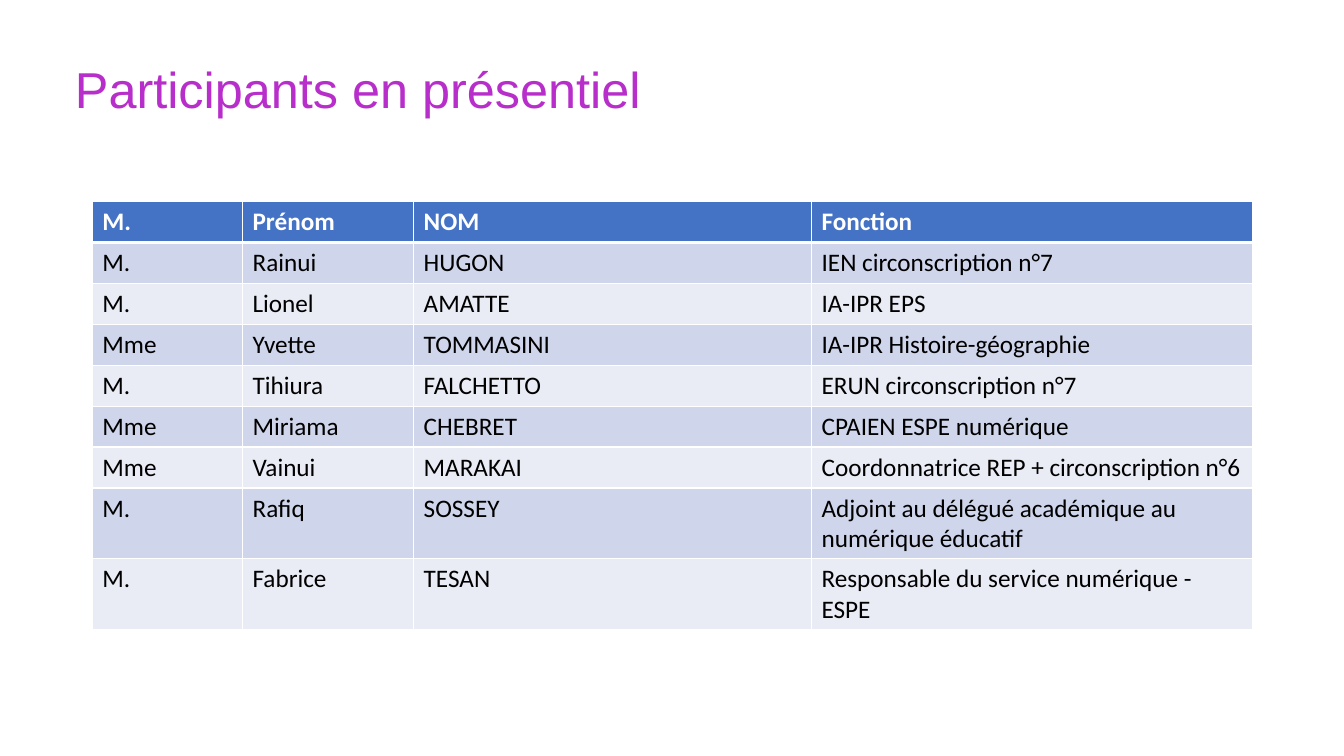
import dataclasses

import lxml.etree
import pptx
import pptx.dml.color
import pptx.enum.text
import pptx.oxml.ns
import pptx.util

PX = 9525  # EMU in one px, 96 px to the inch


@dataclasses.dataclass(frozen=True)
class Theme:
    title_font: str = "Arial"
    body_font: str = "Calibri"
    title_size: int = 36
    body_size: int = 18
    title: str = "B82ECB"
    header: str = "4472C4"
    bands: tuple = ("CFD5EA", "E9EBF5")
    header_text: str = "FFFFFF"
    body_text: str = "000000"
    rule: str = "FFFFFF"
    thin_rule: int = 1
    thick_rule: int = 3


THEME = Theme()

COLUMN_WIDTHS = (143, 163, 379, 420)
ROW_HEIGHT = 39
PARTICIPANTS = (
    ("M.", "Prénom", "NOM", "Fonction"),
    ("M.", "Rainui", "HUGON", "IEN circonscription n°7"),
    ("M.", "Lionel", "AMATTE", "IA-IPR EPS"),
    ("Mme", "Yvette", "TOMMASINI", "IA-IPR Histoire-géographie"),
    ("M.", "Tihiura", "FALCHETTO", "ERUN circonscription n°7"),
    ("Mme", "Miriama", "CHEBRET", "CPAIEN ESPE numérique"),
    ("Mme", "Vainui", "MARAKAI", "Coordonnatrice REP + circonscription n°6"),
    ("M.", "Rafiq", "SOSSEY", "Adjoint au délégué académique au numérique éducatif"),
    ("M.", "Fabrice", "TESAN", "Responsable du service numérique - ESPE"),
)


def px(length):
    return pptx.util.Emu(length * PX)


def rgb(colour):
    return pptx.dml.color.RGBColor.from_string(colour)


def add_run(paragraph, text, font, size, colour, bold=False):
    run = paragraph.add_run()
    run.text = text
    run.font.name = font
    run.font.size = pptx.util.Pt(size)
    run.font.bold = bold
    run.font.color.rgb = rgb(colour)


def add_title(slide, left, top, width, height):
    heading = slide.shapes.add_textbox(px(left), px(top), px(width), px(height))
    frame = heading.text_frame
    frame.word_wrap = True
    frame.vertical_anchor = pptx.enum.text.MSO_ANCHOR.MIDDLE
    frame.paragraphs[0].line_spacing = 0.9
    add_run(frame.paragraphs[0], "Participants en présentiel",
            THEME.title_font, THEME.title_size, THEME.title)


def add_borders(cell, top, bottom):
    """Rule the four sides; must come before the cell's fill."""
    properties = cell._tc.get_or_add_tcPr()
    widths = {"L": THEME.thin_rule, "R": THEME.thin_rule, "T": top, "B": bottom}
    for side, width in widths.items():
        line = lxml.etree.SubElement(properties, pptx.oxml.ns.qn(f"a:ln{side}"),
                                     w=str(pptx.util.Pt(width)))
        fill = lxml.etree.SubElement(line, pptx.oxml.ns.qn("a:solidFill"))
        lxml.etree.SubElement(fill, pptx.oxml.ns.qn("a:srgbClr"), val=THEME.rule)


def add_participants(slide, left, top):
    table = slide.shapes.add_table(
        len(PARTICIPANTS), len(COLUMN_WIDTHS), px(left), px(top),
        px(sum(COLUMN_WIDTHS)), px(ROW_HEIGHT * len(PARTICIPANTS))).table
    for column, width in zip(table.columns, COLUMN_WIDTHS):
        column.width = px(width)

    for index, participant in enumerate(PARTICIPANTS):
        table.rows[index].height = px(ROW_HEIGHT)
        is_header = index == 0
        background = THEME.header if is_header else THEME.bands[(index - 1) % 2]
        colour = THEME.header_text if is_header else THEME.body_text
        # The thick rule runs between the header and the first participant
        upper = THEME.thick_rule if index == 1 else THEME.thin_rule
        lower = THEME.thick_rule if is_header else THEME.thin_rule
        for cell, text in zip(table.rows[index].cells, participant):
            add_borders(cell, upper, lower)
            cell.fill.solid()
            cell.fill.fore_color.rgb = rgb(background)
            add_run(cell.text_frame.paragraphs[0], text, THEME.body_font,
                    THEME.body_size, colour, is_header)


def main():
    deck = pptx.Presentation()
    deck.slide_width, deck.slide_height = px(1280), px(720)
    slide = deck.slides.add_slide(deck.slide_layouts[6])
    add_title(slide, 62, 36, 973, 103)
    add_participants(slide, 88, 192)
    deck.save("out.pptx")


if __name__ == "__main__":
    main()
